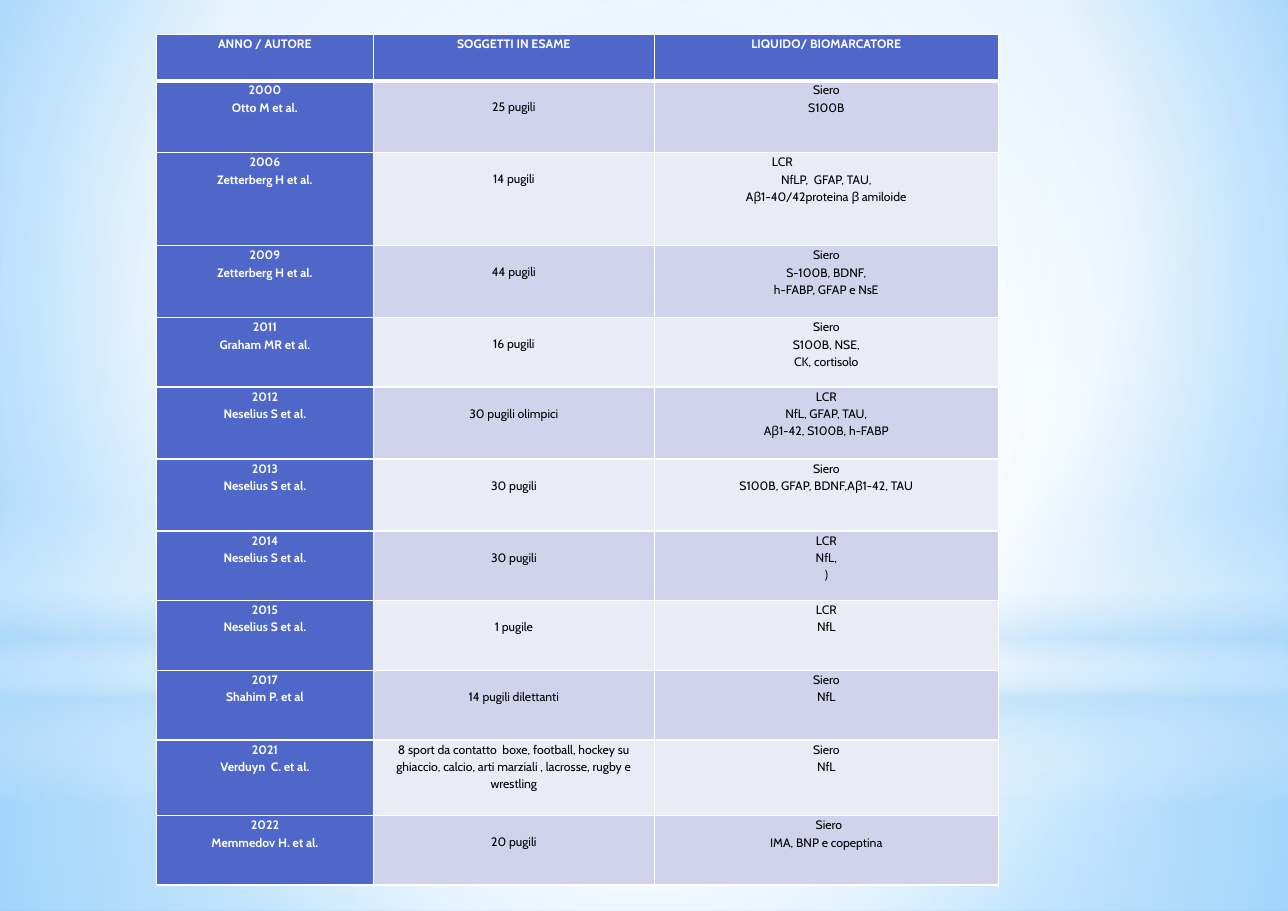
from dataclasses import dataclass

from lxml import etree
from pptx import Presentation
from pptx.dml.color import RGBColor
from pptx.enum.shapes import MSO_SHAPE
from pptx.enum.text import PP_ALIGN
from pptx.oxml import parse_xml
from pptx.oxml.ns import nsdecls, qn
from pptx.slide import Slide
from pptx.table import Table
from pptx.util import Cm, Pt

RECT, OVAL = MSO_SHAPE.RECTANGLE, MSO_SHAPE.OVAL
CENTER, LEFT = PP_ALIGN.CENTER, PP_ALIGN.LEFT

FONT = "Cabin"
WHITE, BLACK, BLUE, SKY = "FFFFFF", "000000", "4E67C8", "B4DCFA"
BANDS = ("D0D3EB", "E9EBF5")
SLIDE_W, SLIDE_H = 29.7, 21.0
LINE_H = 0.39

HEADERS = ("ANNO / AUTORE", "SOGGETTI IN ESAME", "LIQUIDO/ BIOMARCATORE")
HEADER_H = 1.06
COL_WIDTHS = (5.0, 6.48, 7.93)


@dataclass
class Gradient:
    stops: list[tuple[int, str, int]]  # position %, colour, opacity %
    focus: tuple[int, int, int, int] = (50, 50, 50, 50)  # left, top, right, bottom %
    angle: int | None = None  # degrees; None for a circular gradient


@dataclass
class Glow:
    shape: MSO_SHAPE
    top: float
    height: float
    gradient: Gradient


@dataclass
class Study:
    author: str
    subjects: str
    markers: str
    height: float
    subjects_top: float = LINE_H


BACKGROUND = Gradient([(0, "9ED5FF", 100), (60, WHITE, 100), (100, "5BB9FF", 100)],
                      (20, 10, 20, 60))
GLOWS = [
    Glow(RECT, 15.62, 5.38, Gradient([(0, WHITE, 91), (37, WHITE, 76), (100, SKY, 79)])),
    Glow(RECT, 0, 15.62, Gradient([(0, WHITE, 89), (48, WHITE, 62), (100, SKY, 79)])),
    Glow(RECT, 11.53, 7.01, Gradient([(0, WHITE, 0), (29, WHITE, 30), (45, SKY, 40),
                                      (55, WHITE, 26), (65, SKY, 60), (100, WHITE, 0)],
                                     angle=90)),
    Glow(OVAL, 4.9, 15.62, Gradient([(0, WHITE, 100), (56, WHITE, 0)])),
]

STUDIES = [
    Study("2000\nOtto M et al.", "25 pugili", "Siero\nS100B", 1.66),
    Study("2006\nZetterberg H et al.", "14 pugili",
          "LCR\nNfLP,  GFAP, TAU,\nAβ1-40/42proteina β amiloide", 2.14),
    Study("2009\nZetterberg H et al.", "44 pugili",
          "Siero\nS-100B, BDNF,\nh-FABP, GFAP e NsE", 1.66),
    Study("2011\nGraham MR et al.", "16 pugili", "Siero\nS100B, NSE,\nCK, cortisolo", 1.6),
    Study("2012\nNeselius S et al.", "30 pugili olimpici",
          "LCR\nNfL, GFAP, TAU,\nAβ1-42, S100B, h-FABP", 1.66),
    Study("2013\nNeselius S et al.", "30 pugili",
          "Siero\nS100B, GFAP, BDNF,Aβ1-42, TAU", 1.66),
    Study("2014\nNeselius S et al.", "30 pugili", "LCR\nNfL,\n)", 1.6),
    Study("2015\nNeselius S et al.", "1 pugile", "LCR\nNfL", 1.61),
    Study("2017\nShahim P. et al", "14 pugili dilettanti", "Siero\nNfL", 1.61),
    Study("2021\nVerduyn  C. et al.",
          "8 sport da contatto  boxe, football, hockey su ghiaccio, calcio, "
          "arti marziali , lacrosse, rugby e wrestling", "Siero\nNfL", 1.74, 0),
    Study("2022\nMemmedov H. et al.", "20 pugili", "Siero\nIMA, BNP e copeptina", 1.6),
]


def rgb(color: str) -> RGBColor:
    return RGBColor.from_string(color)


def set_gradient(parent: etree.ElementBase, gradient: Gradient) -> None:
    """Swap the solid fill of a properties element for a gradient."""
    stops = "".join(
        f'<a:gs pos="{pos * 1000}"><a:srgbClr val="{color}">'
        f'<a:alpha val="{opacity * 1000}"/></a:srgbClr></a:gs>'
        for pos, color, opacity in gradient.stops)
    if gradient.angle is None:
        l, t, r, b = (edge * 1000 for edge in gradient.focus)
        course = (f'<a:path path="circle"><a:fillToRect l="{l}" t="{t}" r="{r}" b="{b}"/>'
                  '</a:path>')
    else:
        course = f'<a:lin ang="{gradient.angle * 60000}" scaled="0"/>'
    fill = parse_xml(f'<a:gradFill {nsdecls("a")} rotWithShape="1">'
                     f'<a:gsLst>{stops}</a:gsLst>{course}</a:gradFill>')
    parent.replace(parent.find(qn("a:solidFill")), fill)


def draw_backdrop(s: Slide) -> None:
    s.background.fill.solid()
    s.background.fill.fore_color.rgb = rgb(WHITE)
    set_gradient(s.element.find(".//" + qn("p:bgPr")), BACKGROUND)
    for glow in GLOWS:
        sp = s.shapes.add_shape(glow.shape, 0, Cm(glow.top), Cm(SLIDE_W), Cm(glow.height))
        sp.shadow.inherit = False
        sp.line.fill.background()
        sp.fill.solid()
        sp.fill.fore_color.rgb = rgb(WHITE)
        set_gradient(sp.element.spPr, glow.gradient)


def set_borders(tc_pr: etree.ElementBase, bottom: int) -> None:
    widths = {"lnL": 1, "lnR": 1, "lnT": 1, "lnB": bottom}
    if bottom == 1:
        del widths["lnT"]  # the row above already draws this edge
    for i, (tag, width) in enumerate(widths.items()):
        tc_pr.insert(i, parse_xml(
            f'<a:{tag} {nsdecls("a")} w="{Pt(width)}"><a:solidFill>'
            f'<a:srgbClr val="{WHITE}"/></a:solidFill></a:{tag}>'))


def fill_cell(table: Table, row: int, col: int, text: str, top: float = 0) -> None:
    cell = table.cell(row, col)
    heading = row == 0 or col == 0
    cell.margin_left = cell.margin_right = Cm(0.15)
    cell.margin_top, cell.margin_bottom = Cm(top), 0
    cell.fill.solid()
    cell.fill.fore_color.rgb = rgb(BLUE if heading else BANDS[(row - 1) % 2])
    set_borders(cell.fill._xPr, 3 if row == 0 else 1)
    cell.text_frame.text = text
    for p in cell.text_frame.paragraphs:
        p.alignment = CENTER
        p.line_spacing = 1.15
        for r in p.runs:
            r.font.name = FONT
            r.font.size = Pt(8)
            r.font.bold = heading
            r.font.color.rgb = rgb(WHITE if heading else BLACK)


def indent_first_line(table: Table, row: int, indent: float, align: PP_ALIGN) -> None:
    p = table.cell(row, 2).text_frame.paragraphs[0]
    p.alignment = align
    p._p.get_or_add_pPr().set("marL", str(Cm(indent)))


def draw_studies(s: Slide) -> None:
    heights = [HEADER_H] + [study.height for study in STUDIES]
    table = s.shapes.add_table(len(heights), len(COL_WIDTHS), Cm(3.61), Cm(0.8),
                               Cm(sum(COL_WIDTHS)), Cm(sum(heights))).table
    table.horz_banding = False
    for column, width in zip(table.columns, COL_WIDTHS):
        column.width = Cm(width)
    for row, height in zip(table.rows, heights):
        row.height = Cm(height)
    for col, header in enumerate(HEADERS):
        fill_cell(table, 0, col, header)
    for row, study in enumerate(STUDIES, 1):
        fill_cell(table, row, 0, study.author)
        fill_cell(table, row, 1, study.subjects, study.subjects_top)
        fill_cell(table, row, 2, study.markers)
    indent_first_line(table, 2, 2.56, LEFT)
    indent_first_line(table, len(STUDIES), 0.12, CENTER)


def main() -> None:
    prs = Presentation()
    prs.slide_width, prs.slide_height = Cm(SLIDE_W), Cm(SLIDE_H)
    s = prs.slides.add_slide(prs.slide_layouts[6])
    draw_backdrop(s)
    draw_studies(s)
    prs.save("out.pptx")


if __name__ == "__main__":
    main()
